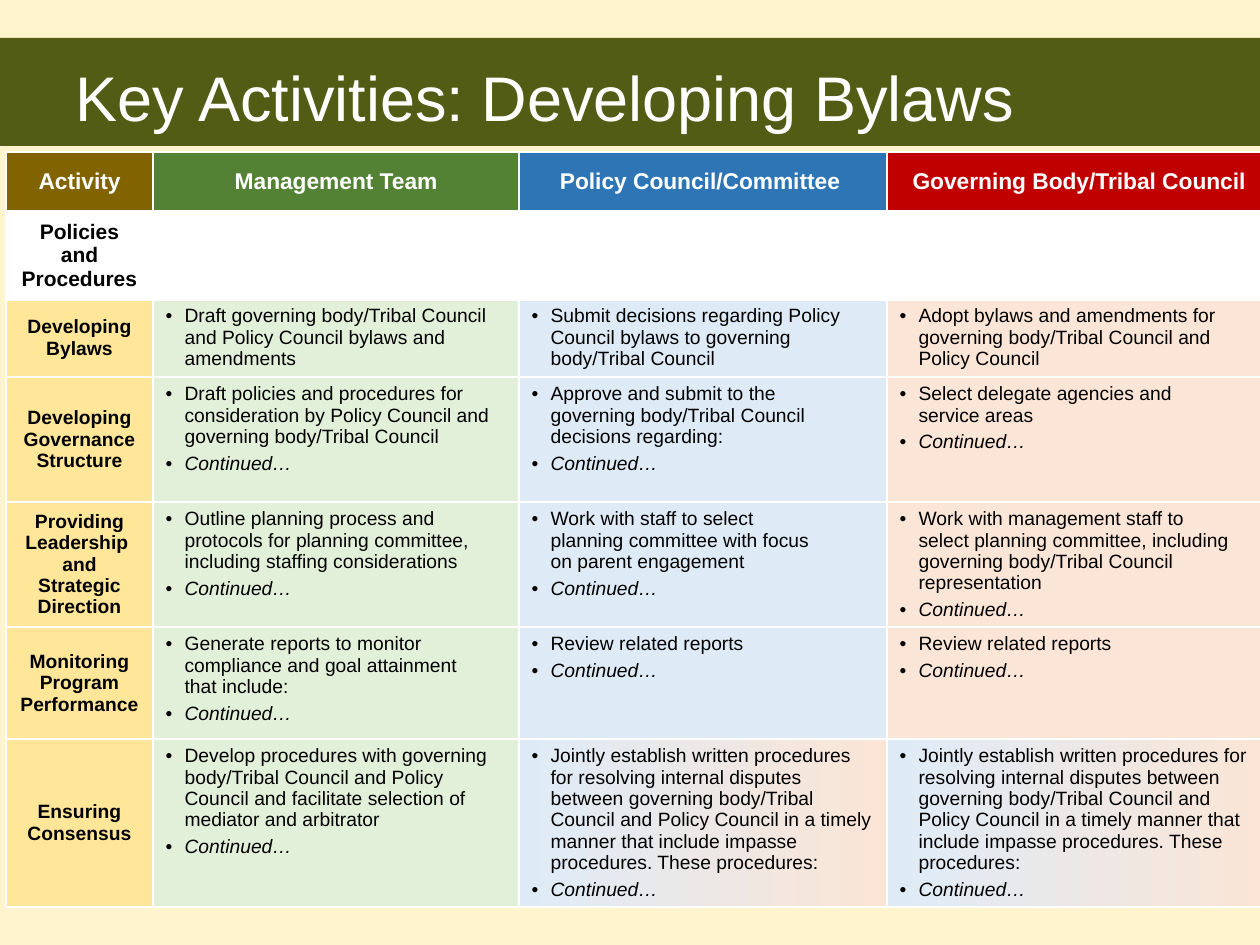
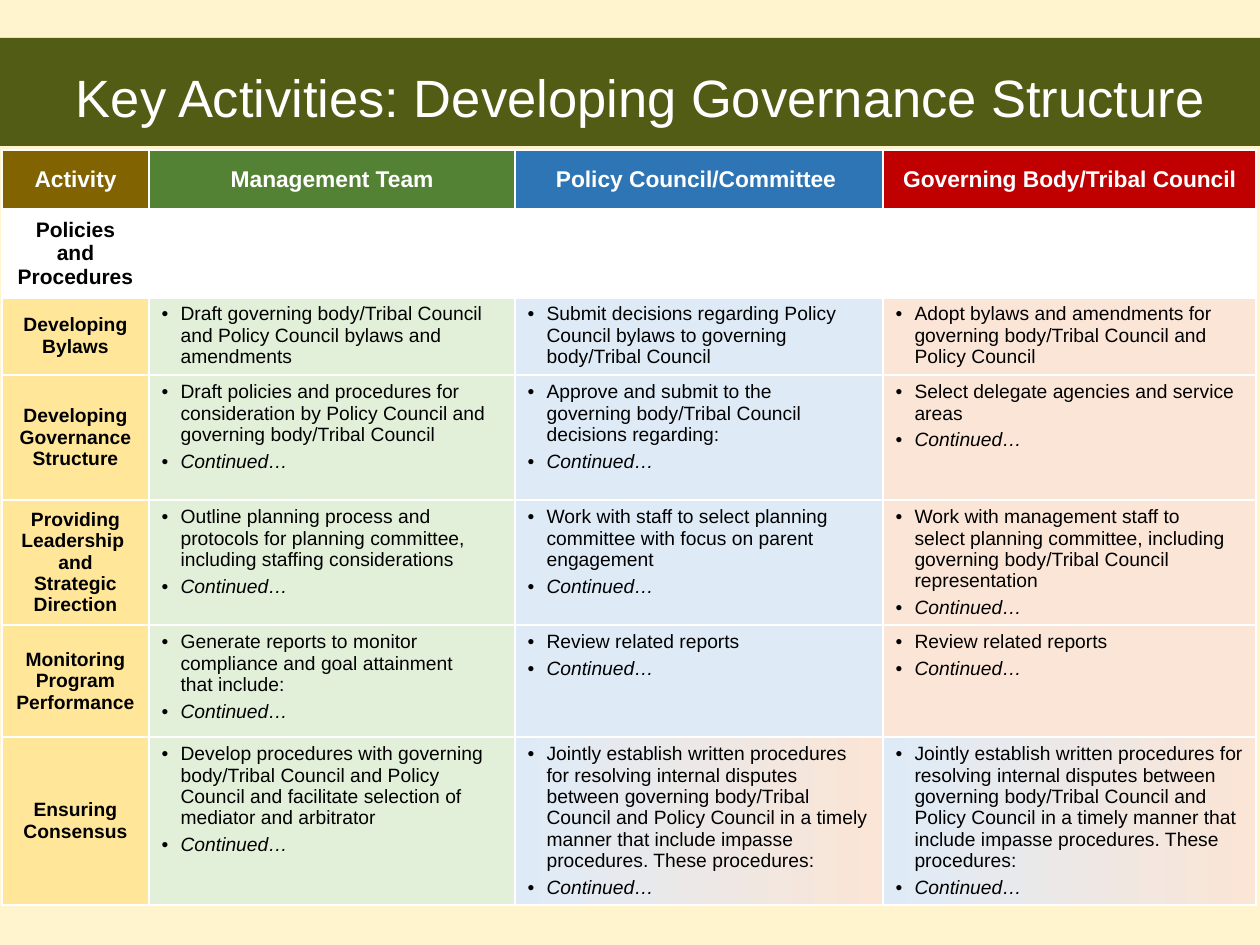
import copy
from dataclasses import dataclass

import pptx
import pptx.dml.color
import pptx.enum.shapes
import pptx.enum.text
import pptx.oxml
import pptx.oxml.ns
import pptx.util
from lxml import etree

EMU_PER_PX = 914400 / 126
ANCHOR = pptx.enum.text.MSO_ANCHOR
ALIGN = pptx.enum.text.PP_ALIGN


def rgb(value):
    return pptx.dml.color.RGBColor.from_string(value)


@dataclass(frozen=True)
class Theme:
    font: str = "Arial"
    page: str = "FFF4CE"
    band: str = "535C14"
    white: str = "FFFFFF"
    black: str = "000000"
    activity: str = "FFE699"
    headers: tuple = ("816301", "548235", "2E75B6", "C00000")
    duties: tuple = ("E2F0D9", "DEEBF7", "FBE5D6")
    shared: tuple = ("DEEBF7", "FBE5D6")
    header_size: int = 13
    section_size: int = 12
    body_size: int = 11
    rule: int = 1
    heavy_rule: int = 3


THEME = Theme()
SLIDE_SIZE = (1260, 945)
TITLE_BOX = (0, 38, 1260, 108)
ROW_HEIGHTS = (60, 87, 78, 125, 125, 112, 168)
BULLET_INDENT = 19

HEADERS = ("Activity", "Management Team", "Policy Council/Committee ",
           "Governing Body/Tribal Council")
SECTION = "Policies and Procedures"
CONTINUED = "Continued…"
JOINT_PROCEDURES = (
    "Jointly establish written procedures for resolving internal disputes "
    "between governing body/Tribal Council and Policy Council in a timely "
    "manner that include impasse procedures. These procedures:")


def px(length):
    return pptx.util.Emu(round(length * EMU_PER_PX))


def apply(target, values):
    for name, value in values.items():
        setattr(target, name, value)


def activity_rows(delegate_duty, planning_duty):
    """Activity name followed by the duty of each group; \\v breaks a line."""
    return (
        ("Developing Bylaws",
         "Draft governing body/Tribal Council and Policy Council bylaws and amendments",
         "Submit decisions regarding Policy Council bylaws to governing body/Tribal Council",
         "Adopt bylaws and amendments for governing body/Tribal Council and Policy Council"),
        ("Developing Governance\nStructure",
         "Draft policies and procedures for consideration by Policy Council "
         "and governing body/Tribal Council",
         "Approve and submit to the \vgoverning body/Tribal Council decisions regarding:",
         delegate_duty),
        ("Providing Leadership \vand Strategic Direction",
         "Outline planning process and protocols for planning committee, "
         "including staffing considerations",
         planning_duty,
         "Work with management staff to \vselect planning committee, including "
         "governing body/Tribal Council representation"),
        ("Monitoring Program Performance",
         "Generate reports to monitor compliance and goal attainment \vthat include:",
         "Review related reports",
         "Review related reports"),
        ("Ensuring Consensus",
         "Develop procedures with governing body/Tribal Council and Policy Council "
         "and facilitate selection of mediator and arbitrator",
         JOINT_PROCEDURES,
         JOINT_PROCEDURES),
    )


# Text
def write(paragraph, text, size, color, bold=False, italic=False):
    paragraph.text = text
    look = {"name": THEME.font, "size": pptx.util.Pt(size), "bold": bold, "italic": italic}
    for run in paragraph.runs:
        apply(run.font, look)
        run.font.color.rgb = rgb(color)
    # A line break takes the type size of the text around it
    for line_break in paragraph._p.findall(pptx.oxml.ns.qn("a:br")):
        line_break.append(copy.deepcopy(paragraph.runs[0]._r.rPr))


def write_label(cell, text, size, color):
    cell.vertical_anchor = ANCHOR.MIDDLE
    for index, line in enumerate(text.split("\n")):
        frame = cell.text_frame
        paragraph = frame.add_paragraph() if index else frame.paragraphs[0]
        write(paragraph, line, size, color, bold=True)
        paragraph.alignment = ALIGN.CENTER


def write_bullet(paragraph, text, italic=False):
    properties = paragraph._p.get_or_add_pPr()
    indent = px(BULLET_INDENT)
    properties.set("marL", str(indent))
    properties.set("indent", str(-indent))
    etree.SubElement(properties, pptx.oxml.ns.qn("a:buFont"), typeface=THEME.font)
    etree.SubElement(properties, pptx.oxml.ns.qn("a:buChar"), char="•")
    write(paragraph, text, THEME.body_size, THEME.black, italic=italic)


def write_duty(cell, duty, continued):
    cell.vertical_anchor = ANCHOR.TOP
    first = cell.text_frame.paragraphs[0]
    write_bullet(first, duty)
    if continued:
        first.space_after = pptx.util.Pt(3)
        write_bullet(cell.text_frame.add_paragraph(), CONTINUED, italic=True)


# Cell surface
def draw_borders(cell, row):
    top = THEME.heavy_rule if row in (1, 2) else THEME.rule
    bottom = THEME.heavy_rule if row in (0, 1) else THEME.rule
    widths = {"lnL": THEME.rule, "lnR": THEME.rule, "lnT": top, "lnB": bottom}
    properties = cell._tc.get_or_add_tcPr()
    for edge, width in widths.items():
        properties.append(pptx.oxml.parse_xml(
            f'<a:{edge} {pptx.oxml.ns.nsdecls("a")} w="{pptx.util.Pt(width)}">'
            f'<a:solidFill><a:srgbClr val="{THEME.white}"/></a:solidFill></a:{edge}>'))


def fill_solid(cell, color):
    cell.fill.solid()
    cell.fill.fore_color.rgb = rgb(color)


def fill_shared(cell):
    cell.fill.gradient()
    cell.fill.gradient_angle = 0
    for stop, color in zip(cell.fill.gradient_stops, THEME.shared):
        stop.color.rgb = rgb(color)


# Title band
def add_title(slide, box, text, size):
    band = slide.shapes.add_shape(
        pptx.enum.shapes.MSO_SHAPE.RECTANGLE, *map(px, box))
    band.shadow.inherit = False
    band.fill.solid()
    band.fill.fore_color.rgb = rgb(THEME.band)
    band.line.fill.background()
    frame = band.text_frame
    apply(frame, {"word_wrap": True, "vertical_anchor": ANCHOR.MIDDLE,
                  "margin_left": px(13), "margin_right": px(13),
                  "margin_top": px(15), "margin_bottom": px(6)})
    heading = frame.paragraphs[0]
    write(heading, text, size, THEME.white)
    heading.alignment = ALIGN.LEFT
    heading._p.get_or_add_pPr().set("indent", str(px(63)))


# Responsibility table
def add_responsibilities(slide, corner, widths, activities):
    left, top = corner
    table = slide.shapes.add_table(
        len(ROW_HEIGHTS), len(widths), px(left), px(top),
        px(sum(widths)), px(sum(ROW_HEIGHTS))).table
    apply(table, {"first_row": False, "horz_banding": False})
    for column, width in zip(table.columns, widths):
        column.width = px(width)
    for row, height in zip(table.rows, ROW_HEIGHTS):
        row.height = px(height)
    for row in range(len(ROW_HEIGHTS)):
        for column in range(len(widths)):
            draw_borders(table.cell(row, column), row)

    # Header and section rows
    for column, (header, color) in enumerate(zip(HEADERS, THEME.headers)):
        write_label(table.cell(0, column), header, THEME.header_size, THEME.white)
        fill_solid(table.cell(0, column), color)
        fill_solid(table.cell(1, column), THEME.white)
    write_label(table.cell(1, 0), SECTION, THEME.section_size, THEME.black)

    # Activity rows
    for row, (activity, *duties) in enumerate(activities, start=2):
        write_label(table.cell(row, 0), activity, THEME.body_size, THEME.black)
        fill_solid(table.cell(row, 0), THEME.activity)
        for column, duty in enumerate(duties, start=1):
            cell = table.cell(row, column)
            write_duty(cell, duty, continued=row > 2)
            if duty == JOINT_PROCEDURES:
                fill_shared(cell)
            else:
                fill_solid(cell, THEME.duties[column - 1])


def add_activity_slide(deck, title, title_size, corner, widths, activities):
    slide = deck.slides.add_slide(deck.slide_layouts[6])
    slide.background.fill.solid()
    slide.background.fill.fore_color.rgb = rgb(THEME.page)
    add_title(slide, TITLE_BOX, title, title_size)
    add_responsibilities(slide, corner, widths, activities)


def main():
    deck = pptx.Presentation()
    deck.slide_width, deck.slide_height = map(px, SLIDE_SIZE)
    add_activity_slide(
        deck, "Key Activities: Developing Bylaws", 36, (6, 152), (147, 366, 368, 384),
        activity_rows(
            "Select delegate agencies and \vservice areas",
            "Work with staff to select \vplanning committee with focus "
            "\von parent engagement"))
    add_activity_slide(
        deck, "Key Activities: Developing Governance Structure", 30,
        (2, 150), (147, 366, 368, 373),
        activity_rows(
            "Select delegate agencies and service areas",
            "Work with staff to select planning committee with focus on parent engagement"))
    deck.save("out.pptx")


if __name__ == "__main__":
    main()
